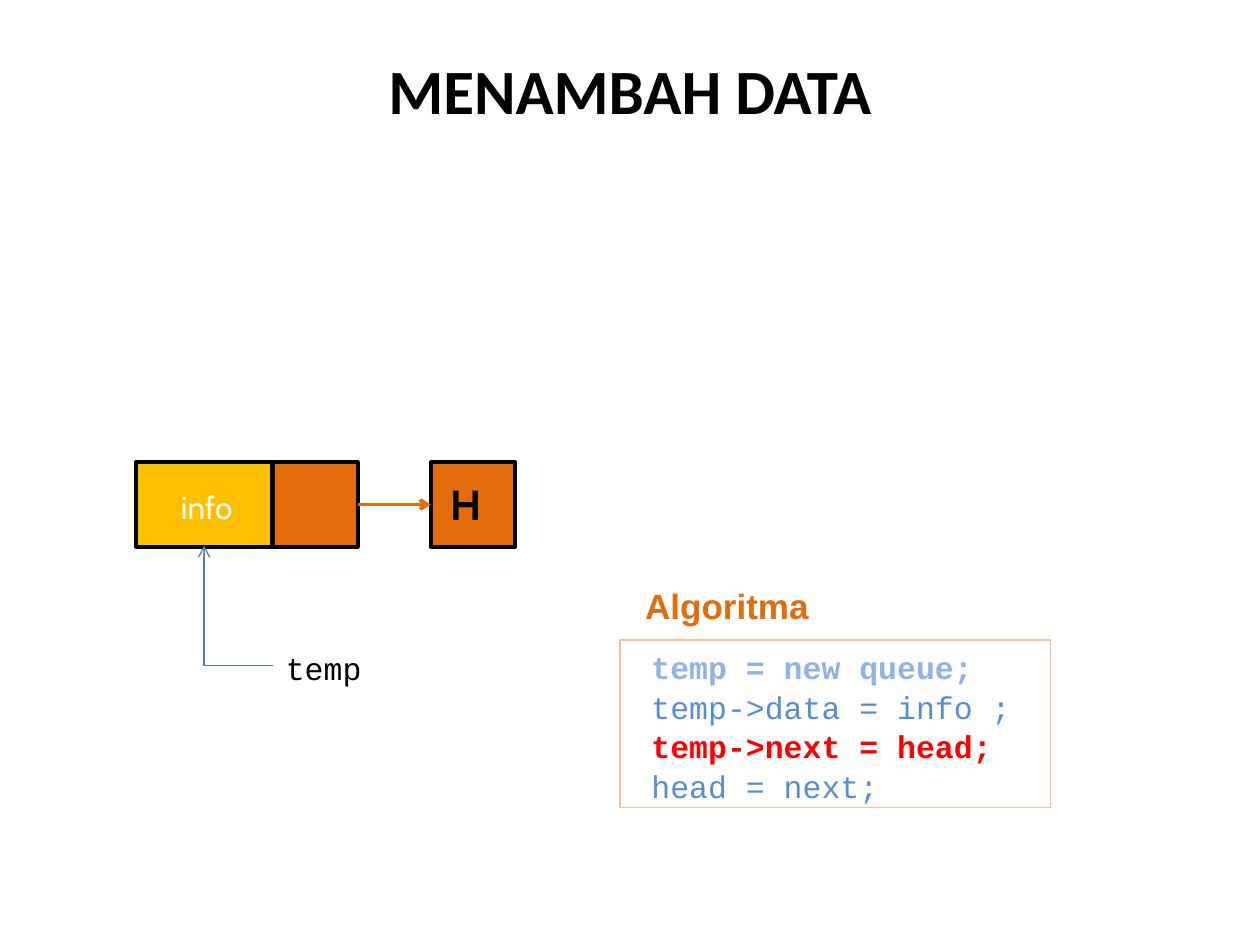
from pptx import Presentation
from pptx.dml.color import RGBColor
from pptx.enum.shapes import MSO_CONNECTOR, MSO_SHAPE
from pptx.enum.text import MSO_ANCHOR, PP_ALIGN
from pptx.oxml.ns import qn
from pptx.util import Inches, Pt
from lxml.etree import SubElement

BLACK = RGBColor(0x00, 0x00, 0x00)
WHITE = RGBColor(0xFF, 0xFF, 0xFF)
ORANGE = RGBColor(0xE4, 0x6C, 0x0A)
PEACH = RGBColor(0xFA, 0xC0, 0x90)
GOLD = RGBColor(0xFF, 0xC0, 0x00)
RED = RGBColor(0xFF, 0x00, 0x00)
BLUE = RGBColor(0x55, 0x8E, 0xD5)
PALE = RGBColor(0x8E, 0xB4, 0xE3)
STEEL = RGBColor(0x4B, 0x7E, 0xBC)

CODE = [
    ("temp = new queue;", PALE, True),
    ("temp->data = info ;", BLUE, False),
    ("temp->next = head;", RED, True),
    ("head = next;", BLUE, False),
]
ROW, SIDE = 3.67, 0.67  # top and height of the node cells


def add_box(slide, x, y, w, h, fill=None, line=None, width=2.25):
    box = slide.shapes.add_shape(
        MSO_SHAPE.RECTANGLE, Inches(x), Inches(y), Inches(w), Inches(h))
    box.shadow.inherit = False
    if fill is None:
        box.fill.background()
    else:
        box.fill.solid()
        box.fill.fore_color.rgb = fill
    if line is None:
        box.line.fill.background()
    else:
        box.line.color.rgb = line
        box.line.width = Pt(width)
    return box


def style(para, text, font, size, color, bold=False, align=PP_ALIGN.LEFT):
    para.text = text
    para.alignment = align
    para.font.name = font
    para.font.size = Pt(size)
    para.font.bold = bold
    para.font.color.rgb = color


def add_text(slide, x, y, w, h, *look, left=0.1, top=0.05, **more):
    frame = slide.shapes.add_textbox(
        Inches(x), Inches(y), Inches(w), Inches(h)).text_frame
    frame.word_wrap = True
    frame.margin_left = Inches(left)
    frame.margin_top = Inches(top)
    style(frame.paragraphs[0], *look, **more)
    return frame


def add_arrow(slide, kind, start, end, color, width):
    arrow = slide.shapes.add_connector(
        kind, *[Inches(n) for n in (*start, *end)])
    arrow.line.color.rgb = color
    arrow.line.width = Pt(width)
    SubElement(arrow.line._get_or_add_ln(), qn("a:tailEnd"), type="arrow")
    SubElement(arrow._element.spPr, qn("a:effectLst"))
    return arrow


def add_bend(slide, tip, tail, color, width):
    """One-corner arrow: runs left from tail, then up to tip."""
    bend = add_arrow(slide, MSO_CONNECTOR.ELBOW, tip, tail, color, width)
    props = bend._element.spPr
    props.find(qn("a:prstGeom")).set("prst", "bentConnector2")
    props.find(qn("a:xfrm")).set("rot", "10800000")


def add_code(slide):
    frame = add_box(slide, 4.92, 5.08, 3.42, 1.33, line=PEACH, width=0.75).text_frame
    frame.word_wrap = True
    frame.vertical_anchor = MSO_ANCHOR.TOP
    frame.margin_left = Inches(0.25)
    for i, (text, color, bold) in enumerate(CODE):
        para = frame.add_paragraph() if i else frame.paragraphs[0]
        style(para, text, "Courier New", 18, color, bold)
        para.line_spacing = 1.05


def main():
    deck = Presentation()
    deck.slide_width, deck.slide_height = Inches(10), Inches(7.5)
    slide = deck.slides.add_slide(deck.slide_layouts[6])

    # Title
    title = add_text(slide, 0.5, 0.08, 9, 1.25, "MENAMBAH DATA", "Calibri", 36,
                     BLACK, True, align=PP_ALIGN.CENTER)
    title.vertical_anchor = MSO_ANCHOR.MIDDLE

    # Algorithm
    add_code(slide)
    add_text(slide, 4.87, 4.59, 3.82, 0.5, "Algoritma", "Arial", 20,
             ORANGE, True, left=0.25)

    # New node: link cell and data cell
    link = add_box(slide, 2.17, ROW, SIDE, SIDE, ORANGE, BLACK)
    add_box(slide, 1.08, ROW, 1.08, SIDE, GOLD, BLACK)
    info = add_box(slide, 1.33, 3.82, 0.62, 0.4, GOLD).text_frame
    info.word_wrap = False
    style(info.paragraphs[0], "info", "Cabin", 18, WHITE, align=PP_ALIGN.CENTER)

    # Pointer to the new node
    add_bend(slide, (1.62, 4.33), (2.17, 5.28), STEEL, 0.75)
    add_text(slide, 2.17, 4.97, 1.25, 0.58, "temp", "Courier New", 18,
             BLACK, top=0.18)

    # Head node and its link
    head = add_box(slide, 3.42, ROW, SIDE, SIDE, ORANGE, BLACK)
    arrow = add_arrow(slide, MSO_CONNECTOR.STRAIGHT, (2.84, 4), (3.42, 4), ORANGE, 2)
    arrow.begin_connect(link, 3)
    arrow.end_connect(head, 1)
    add_text(slide, 3.42, 3.75, 0.56, 0.5, "H", "Cabin", 24, BLACK, True,
             align=PP_ALIGN.CENTER)

    deck.save("out.pptx")


if __name__ == "__main__":
    main()
